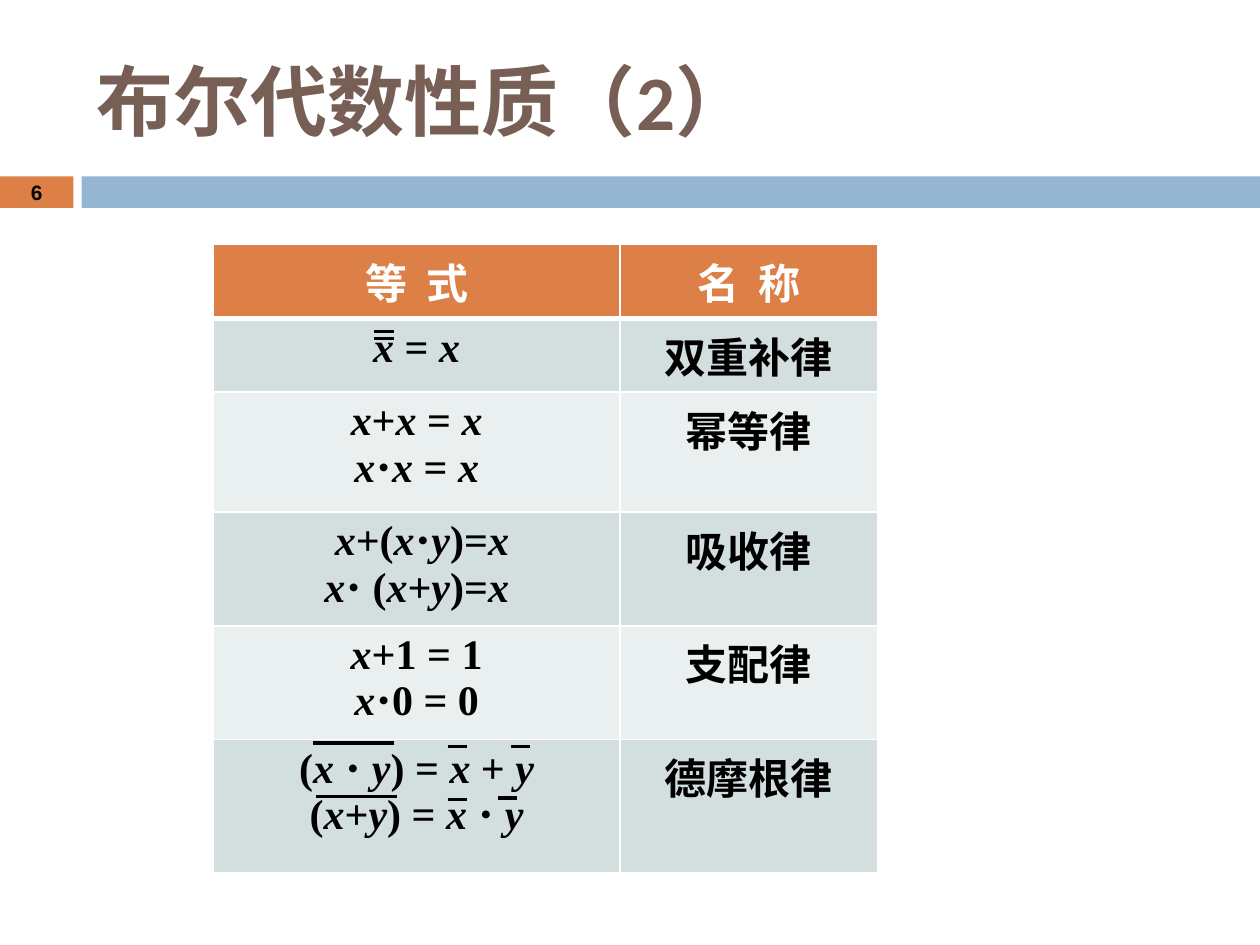
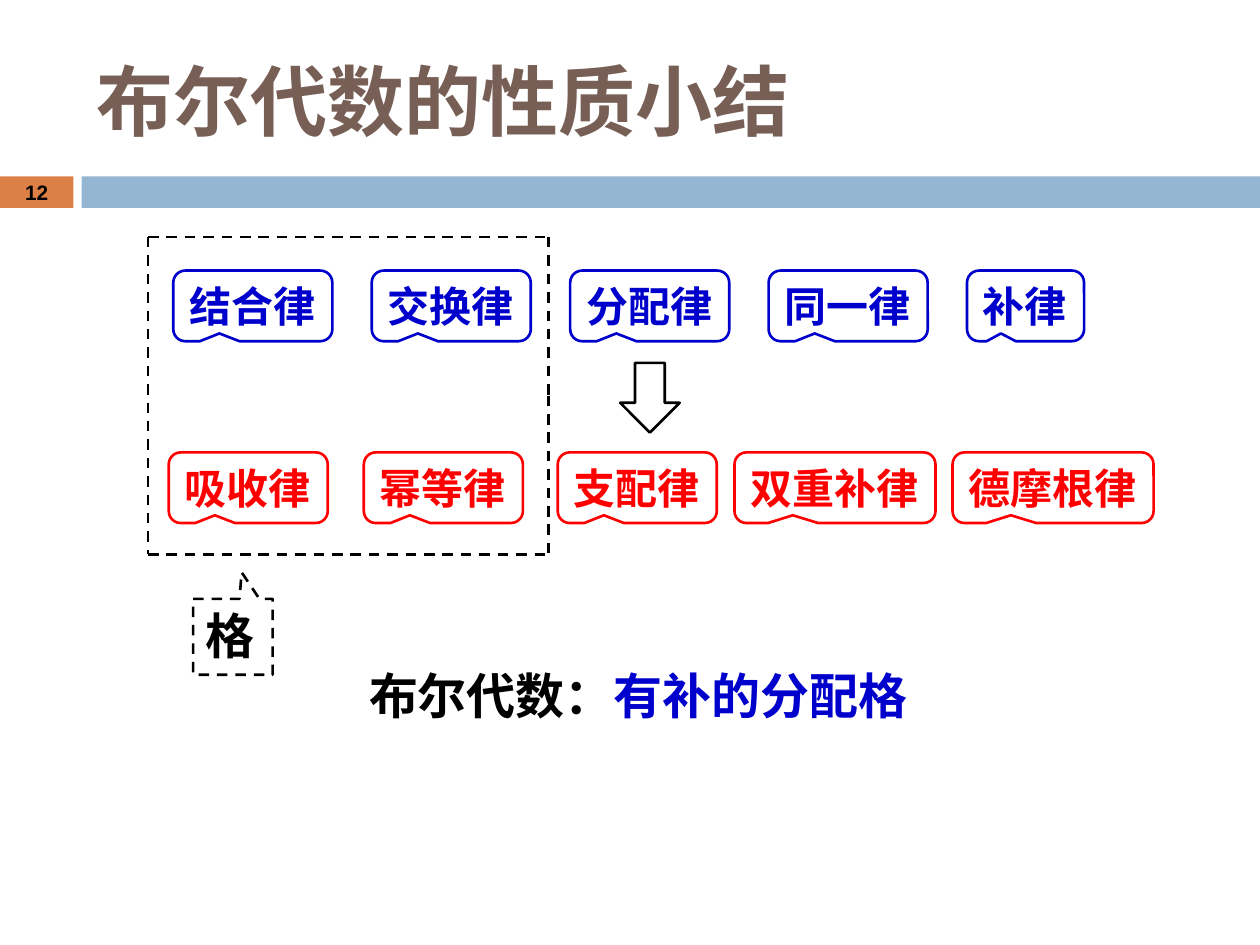
from itertools import groupby

from lxml import etree
from pptx import Presentation
from pptx.dml.color import RGBColor
from pptx.enum.dml import MSO_LINE
from pptx.enum.shapes import MSO_CONNECTOR, MSO_SHAPE
from pptx.enum.text import MSO_ANCHOR, MSO_AUTO_SIZE, PP_ALIGN
from pptx.oxml.ns import qn
from pptx.util import Pt

LEFT, CENTER = PP_ALIGN.LEFT, PP_ALIGN.CENTER
TOP, MIDDLE = MSO_ANCHOR.TOP, MSO_ANCHOR.MIDDLE
DASH = MSO_LINE.DASH

ORANGE = RGBColor(0xDD, 0x80, 0x47)
SKY = RGBColor(0x94, 0xB6, 0xD2)
BROWN = RGBColor(0x77, 0x5F, 0x55)
WHITE = RGBColor(0xFF, 0xFF, 0xFF)
BLACK = RGBColor(0, 0, 0)
BLUE = RGBColor(0, 0, 0xCC)
RED = RGBColor(0xFF, 0, 0)
ROW_DARK = RGBColor(0xD3, 0xDE, 0xDE)
ROW_LIGHT = RGBColor(0xEA, 0xEF, 0xEF)

SERIF, SANS, TITLE_FONT = "Times New Roman", "Arial", "Calibri"

# Content: laws as (equations, name, row height)
LAWS_TITLE = "布尔代数性质（2）"
LAWS = [
    (["等  式"], "名  称", 42.2),
    (["x = x"], "双重补律", 41.7),
    (["x+x = x", "x⋅x = x"], "幂等律", 68.6),
    ([" x+(x⋅y)=x", "x⋅ (x+y)=x"], "吸收律", 65),
    (["x+1 = 1", "x⋅0 = 0"], "支配律", 65),
    (["(x ⋅ y) = x + y", "(x+y) = x ⋅ y"], "德摩根律", 76.2),
]
LAWS_LEFT, LAWS_TOP = 121.9, 139.8
LAWS_COLUMNS = (232.4, 147.2)

# Overbars of the complements: left, y, length
SHORT_BAR, LONG_BAR = 11.2, 46.3
OVERBARS = [
    (213.8, 189.4, SHORT_BAR), (213.8, 193.7, SHORT_BAR),
    (255.8, 426.8, SHORT_BAR), (291.8, 426.8, SHORT_BAR),
    (255.8, 457, SHORT_BAR), (284.4, 456, SHORT_BAR),
    (179.1, 424.6, LONG_BAR), (180.6, 455, LONG_BAR),
]

# Content: summary
SUMMARY_TITLE = "布尔代数的性质小结"
AXIOMS = ["结合律", "交换律", "分配律", "同一律", "补律"]
AXIOM_LEFT, AXIOM_PITCH, AXIOM_TOP = 99, 113.4, 154.6
DERIVED = [("吸收律", 96.4), ("幂等律", 207.9), ("支配律", 318.7),
           ("双重补律", 419.7), ("德摩根律", 544.3)]
DERIVED_TOP = 258.5
CONCLUSION = [("布尔代数：", BLACK), ("有补的分配格", BLUE)]
LATTICE = (84.6, 135.4, 313.4, 316.8)  # left, top, right, bottom


def style(span, size, font, color):
    span.font.size = Pt(size)
    span.font.name = font
    span.font.bold = True
    span.font.color.rgb = color


def write(box, text, size, font, color, align=LEFT, anchor=TOP, wrap=True):
    frame = box.text_frame
    frame.text = text
    frame.word_wrap = wrap
    frame.auto_size = MSO_AUTO_SIZE.NONE
    frame.vertical_anchor = anchor
    para = frame.paragraphs[0]
    para.alignment = align
    for span in para.runs:
        style(span, size, font, color)


def add_box(page, kind, place, fill=None, line=None):
    box = page.shapes.add_shape(kind, *map(Pt, place))
    box.shadow.inherit = False
    if fill is None:
        box.fill.background()
    else:
        box.fill.solid()
        box.fill.fore_color.rgb = fill
    if line is None:
        box.line.fill.background()
    else:
        box.line.color.rgb = line
        box.line.width = Pt(1.5)
    return box


def add_line(page, ends, width, dash=None):
    line = page.shapes.add_connector(MSO_CONNECTOR.STRAIGHT, *map(Pt, ends))
    line.line.color.rgb = BLACK
    line.line.width = Pt(width)
    if dash is not None:
        line.line.dash_style = dash
    etree.SubElement(line._element.spPr, qn("a:effectLst"))


def add_page(deck, title, number):
    """Slide with title, colour bands and page number."""
    page = deck.slides.add_slide(deck.slide_layouts[5])
    add_box(page, MSO_SHAPE.RECTANGLE, (0, 100.8, 42, 18), ORANGE)
    add_box(page, MSO_SHAPE.RECTANGLE, (46.6, 100.8, 673.4, 18), SKY)
    box = page.shapes.add_textbox(0, Pt(100.1), Pt(42), Pt(19.4))
    write(box, number, 11.9, SANS, BLACK, CENTER, MIDDLE)
    head = page.shapes.title
    head.left, head.top, head.width, head.height = map(Pt, (48.2, 18, 642, 78))
    write(head, title, 44, TITLE_FONT, BROWN, LEFT, MIDDLE)
    return page


def set_borders(cell, widths):
    """White cell borders; widths run left, right, top, bottom."""
    properties = cell._tc.get_or_add_tcPr()
    for place, (side, width) in enumerate(zip("LRTB", widths)):
        border = etree.Element(qn("a:ln" + side), w=str(Pt(width)))
        fill = etree.SubElement(border, qn("a:solidFill"))
        etree.SubElement(fill, qn("a:srgbClr"), val=str(WHITE))
        properties.insert(place, border)


def fill_cell(cell, lines, row):
    """Write centred lines, with the variables x and y in italics."""
    cell.fill.solid()
    cell.fill.fore_color.rgb = (
        ORANGE if row == 0 else ROW_DARK if row % 2 else ROW_LIGHT)
    set_borders(cell, (1, 1, 3 if row == 1 else 1, 3 if row == 0 else 1))
    frame = cell.text_frame
    frame.text = "\n".join(lines)
    for para, line in zip(frame.paragraphs, lines):
        para.alignment = CENTER
        para.text = ""
        for italic, letters in groupby(line, key=lambda letter: letter in "xy"):
            span = para.add_run()
            span.text = "".join(letters)
            style(span, 24, SERIF, WHITE if row == 0 else BLACK)
            span.font.italic = italic


def build_laws(deck):
    page = add_page(deck, LAWS_TITLE, "6")
    heights = [height for _, _, height in LAWS]
    table = page.shapes.add_table(
        len(LAWS), 2, Pt(LAWS_LEFT), Pt(LAWS_TOP),
        Pt(sum(LAWS_COLUMNS)), Pt(sum(heights))).table
    for column, width in zip(table.columns, LAWS_COLUMNS):
        column.width = Pt(width)
    for row, (equations, name, height) in enumerate(LAWS):
        table.rows[row].height = Pt(height)
        fill_cell(table.cell(row, 0), equations, row)
        fill_cell(table.cell(row, 1), [name], row)
    for left, y, length in OVERBARS:
        add_line(page, (left, y, left + length, y), 1.75)


def add_law(page, name, left, top, color):
    place = (left, top, 24 * len(name) + 18.9, 40.4)
    box = add_box(page, MSO_SHAPE.ROUNDED_RECTANGULAR_CALLOUT, place, line=color)
    for index, value in enumerate((-0.21, 0.39, 0.17)):
        box.adjustments[index] = value
    write(box, name, 24, SANS, color, wrap=False)


def build_summary(deck):
    page = add_page(deck, SUMMARY_TITLE, "12")

    # Axioms, arrow, derived laws
    for index, name in enumerate(AXIOMS):
        add_law(page, name, AXIOM_LEFT + index * AXIOM_PITCH, AXIOM_TOP, BLUE)
    add_box(page, MSO_SHAPE.DOWN_ARROW, (354.4, 207.4, 34, 39.8), line=BLACK)
    for name, left in DERIVED:
        add_law(page, name, left, DERIVED_TOP, RED)

    # Dashed frame around the lattice laws, and its label
    left, top, right, bottom = LATTICE
    middle = (top + bottom) / 2
    for ends in [(left, top, left, bottom), (left, top, right, top),
                 (right, top, right, middle), (right, middle, right, bottom),
                 (left, bottom, right, bottom)]:
        add_line(page, ends, 1.5, DASH)
    label = add_box(page, MSO_SHAPE.RECTANGULAR_CALLOUT,
                    (110.4, 342.2, 45.4, 43.4), line=BLACK)
    label.line.dash_style = DASH
    label.adjustments[0], label.adjustments[1] = 0.11, -0.85
    write(label, "格", 28, SANS, BLACK, wrap=False)

    # Conclusion
    box = page.shapes.add_textbox(Pt(61.2), Pt(370), Pt(607), Pt(56))
    box.text_frame.word_wrap = True
    para = box.text_frame.paragraphs[0]
    para.alignment = CENTER
    para.line_spacing = 1.2
    para.space_before = Pt(5.6)
    for text, color in CONCLUSION:
        span = para.add_run()
        span.text = text
        style(span, 28, SERIF, color)


def main():
    deck = Presentation()
    deck.slide_width, deck.slide_height = Pt(720), Pt(540)
    build_laws(deck)
    build_summary(deck)
    deck.save("out.pptx")


if __name__ == "__main__":
    main()
